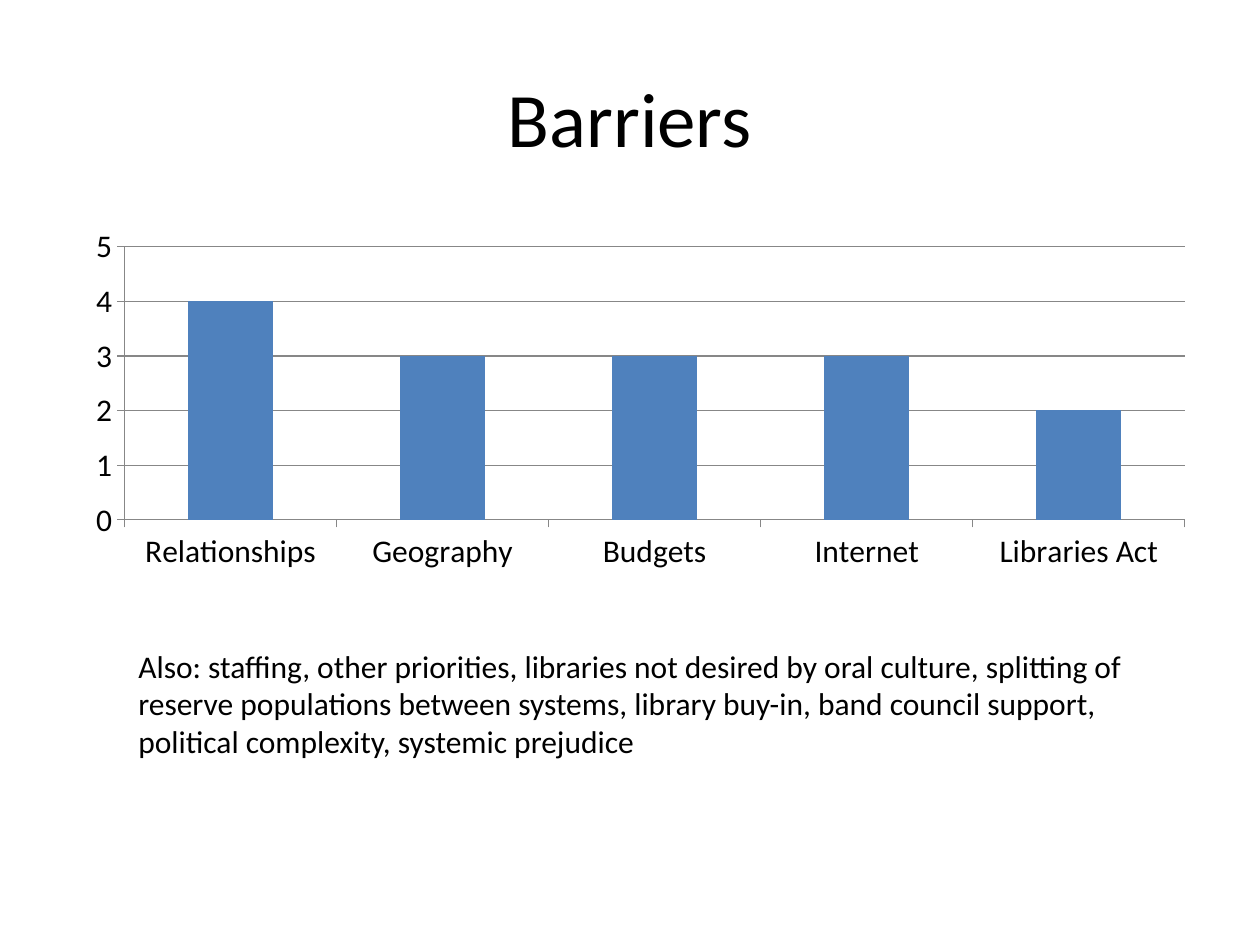
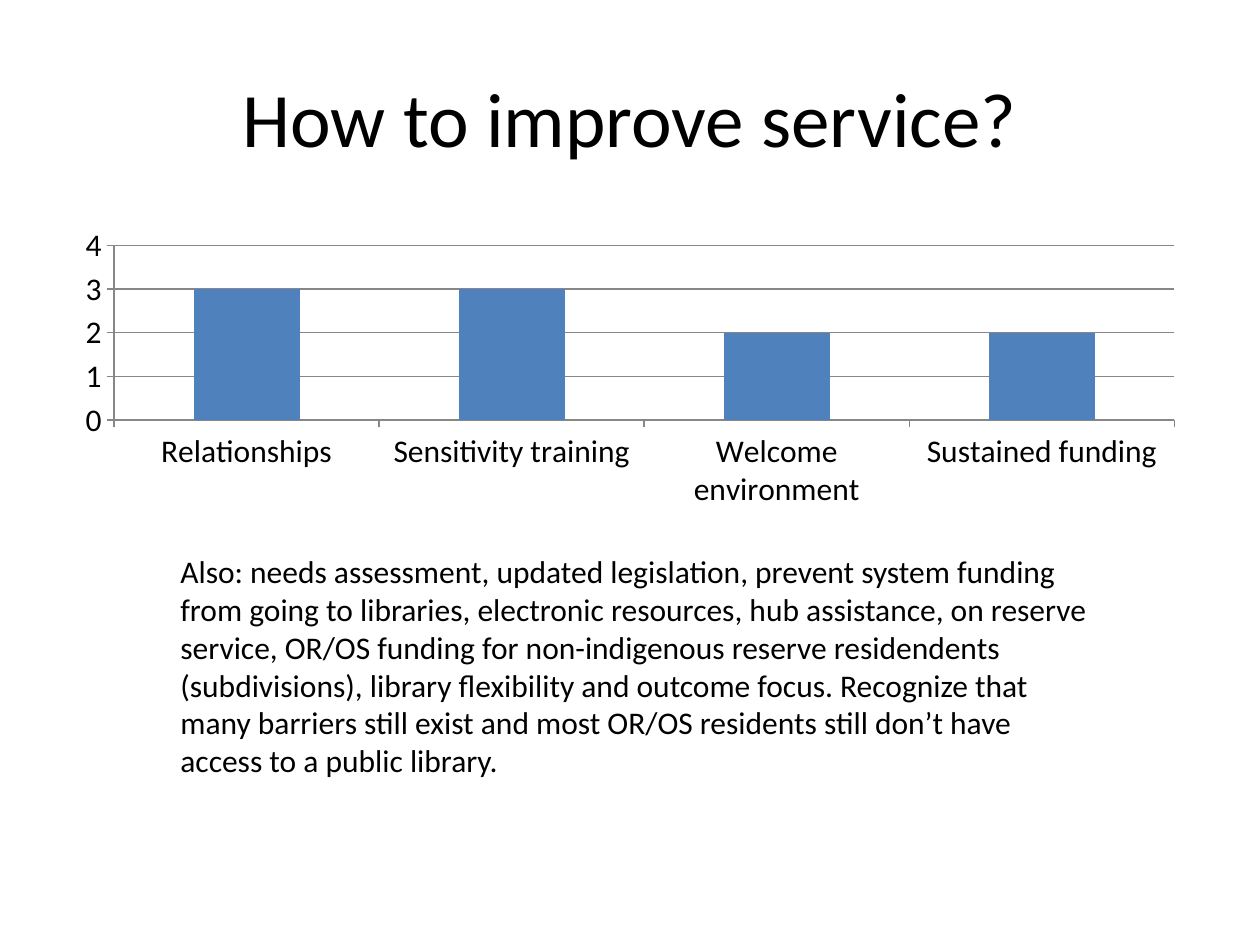
from pptx import Presentation
from pptx.chart.data import CategoryChartData
from pptx.dml.color import RGBColor
from pptx.enum.chart import XL_CHART_TYPE, XL_TICK_MARK
from pptx.enum.text import MSO_ANCHOR, PP_ALIGN
from pptx.util import Inches, Pt

FONT = "Calibri"
INK = RGBColor(0x00, 0x00, 0x00)
BAR = RGBColor(0x4F, 0x81, 0xBD)
RULE = RGBColor(0x87, 0x87, 0x87)
WIDE, HIGH = Inches(10), Inches(7.5)
COLS, ROWS = 120, 90
TITLE = (6, 3.6, 108, 15)


def place(col, row, cols, rows):
    """Turn grid cells into left, top, width and height."""
    return (round(WIDE * col / COLS), round(HIGH * row / ROWS),
            round(WIDE * cols / COLS), round(HIGH * rows / ROWS))


def style(font, size):
    font.name = FONT
    font.size = Pt(size)
    font.color.rgb = INK


def add_page(deck, text):
    page = deck.slides.add_slide(deck.slide_layouts[5])
    title = page.shapes.title
    title.left, title.top, title.width, title.height = place(*TITLE)
    frame = title.text_frame
    frame.text = text
    frame.vertical_anchor = MSO_ANCHOR.MIDDLE
    line = frame.paragraphs[0]
    line.alignment = PP_ALIGN.CENTER
    style(line.runs[0].font, 44)
    return page


def add_bars(page, cells, votes):
    data = CategoryChartData(number_format="General")
    data.categories = list(votes)
    data.add_series("Series 1", list(votes.values()))
    chart = page.shapes.add_chart(
        XL_CHART_TYPE.COLUMN_CLUSTERED, *place(*cells), data).chart
    chart.has_title = False
    chart.has_legend = False
    style(chart.font, 18)

    plot = chart.plots[0]
    plot.gap_width = 150
    plot.vary_by_categories = False
    fill = plot.series[0].format.fill
    fill.solid()
    fill.fore_color.rgb = BAR

    scale = chart.value_axis
    scale.minimum_scale = 0
    scale.maximum_scale = max(votes.values()) + 1
    scale.major_unit = 1
    scale.has_major_gridlines = True
    for axis in (scale, chart.category_axis):
        axis.major_tick_mark = XL_TICK_MARK.OUTSIDE
        axis.minor_tick_mark = XL_TICK_MARK.NONE
    for part in (scale, chart.category_axis, scale.major_gridlines):
        part.format.line.color.rgb = RULE
        part.format.line.width = Pt(0.75)


def add_note(page, cells, text):
    frame = page.shapes.add_textbox(*place(*cells)).text_frame
    frame.word_wrap = True
    frame.text = text
    style(frame.paragraphs[0].runs[0].font, 18)


def main():
    deck = Presentation()
    deck.slide_width, deck.slide_height = WIDE, HIGH

    page = add_page(deck, "Barriers")
    add_bars(page, (7, 21, 108, 34), {
        "Relationships": 4, "Geography": 3, "Budgets": 3,
        "Internet": 3, "Libraries Act": 2})
    add_note(page, (12, 61, 97, 12),
             "Also: staffing, other priorities, libraries not desired by oral "
             "culture, splitting of reserve populations between systems, "
             "library buy-in, band council support, political complexity, "
             "systemic prejudice")

    page = add_page(deck, "How to improve service?")
    add_bars(page, (6, 21, 108, 28), {
        "Relationships": 3, "Sensitivity training": 3,
        "Welcome environment": 2, "Sustained funding": 2})
    add_note(page, (16, 52, 90, 27),
             "Also: needs assessment, updated legislation, prevent system "
             "funding from going to libraries, electronic resources, hub "
             "assistance, on reserve service, OR/OS funding for "
             "non-indigenous reserve residendents (subdivisions), library "
             "flexibility and outcome focus. Recognize that many barriers "
             "still exist and most OR/OS residents still don’t have access "
             "to a public library.")

    deck.save("out.pptx")


if __name__ == "__main__":
    main()
